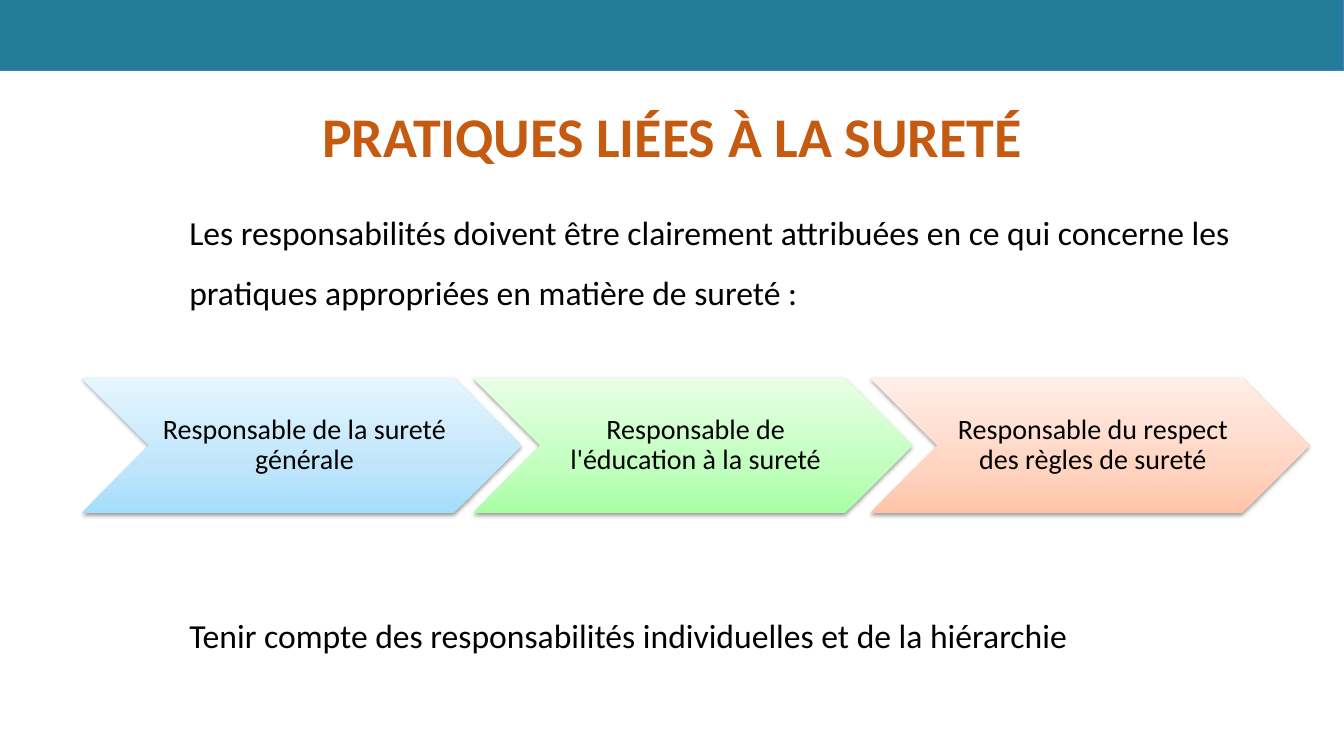
"""Build the slide on who is responsible for safety practices."""
from copy import deepcopy
from dataclasses import dataclass

from lxml import etree
from pptx import Presentation
from pptx.dml.color import RGBColor
from pptx.enum.shapes import MSO_SHAPE
from pptx.enum.text import MSO_ANCHOR, PP_ALIGN
from pptx.oxml.ns import qn
from pptx.shapes.autoshape import Shape
from pptx.slide import Slide
from pptx.util import Inches, Pt

RECTANGLE, CHEVRON = MSO_SHAPE.RECTANGLE, MSO_SHAPE.CHEVRON
TOP, MIDDLE = MSO_ANCHOR.TOP, MSO_ANCHOR.MIDDLE
LEFT, CENTER = PP_ALIGN.LEFT, PP_ALIGN.CENTER

BLACK = RGBColor(0x00, 0x00, 0x00)
TEAL = RGBColor(0x23, 0x7C, 0x9A)
BAND_EDGE = RGBColor(0x4B, 0x7E, 0xBC)
ORANGE = RGBColor(0xC5, 0x5A, 0x11)
BLUES = (RGBColor(0xA4, 0xDD, 0xFB), RGBColor(0xC0, 0xE6, 0xFB), RGBColor(0xE6, 0xF6, 0xFF))
GREENS = (RGBColor(0xA9, 0xFF, 0xA4), RGBColor(0xC2, 0xFF, 0xBF), RGBColor(0xE8, 0xFF, 0xE6))
PEACHES = (RGBColor(0xFF, 0xC4, 0xA9), RGBColor(0xFF, 0xD5, 0xC2), RGBColor(0xFF, 0xEF, 0xE8))

FONT = "Calibri"
STOP_POSITIONS = (0, 0.35, 1)
STEP_TOP, STEP_WIDTH, STEP_HEIGHT = 3.75, 4.36, 1.34


@dataclass(frozen=True)
class Statement:
    text: str
    left: float
    top: float
    width: float
    height: float
    size: int
    color: RGBColor = BLACK
    bold: bool = False
    align: PP_ALIGN = LEFT
    spacing: float = 1.0


@dataclass(frozen=True)
class Responsibility:
    text: str
    left: float
    shades: tuple[RGBColor, ...]


STATEMENTS = (
    Statement("PRATIQUES LIÉES À LA SURETÉ", 0.96, 0.96, 11.41, 0.77, 40,
              ORANGE, True, CENTER),
    Statement("Les responsabilités doivent être clairement attribuées en ce qui concerne les "
              "pratiques appropriées en matière de sureté :",
              1.78, 1.85, 10.77, 1.4, 24, spacing=1.5),
    Statement("Tenir compte des responsabilités individuelles et de la hiérarchie",
              1.78, 5.85, 10.77, 0.75, 24, spacing=1.5),
)
RESPONSIBILITIES = (
    Responsibility("Responsable de la sureté générale", 0.81, BLUES),
    Responsibility("Responsable de l'éducation à la sureté", 4.69, GREENS),
    Responsibility("Responsable du respect des règles de sureté", 8.63, PEACHES),
)


def write(shape: Shape, text: str, size: int, color: RGBColor, bold: bool,
          align: PP_ALIGN, spacing: float, anchor: MSO_ANCHOR) -> None:
    """Set the text of a shape and its formatting."""
    frame = shape.text_frame
    frame.text = text
    frame.word_wrap = True
    frame.vertical_anchor = anchor
    paragraph = frame.paragraphs[0]
    paragraph.alignment = align
    paragraph.line_spacing = spacing
    font = paragraph.runs[0].font
    font.name, font.size, font.bold = FONT, Pt(size), bold
    font.color.rgb = color


def add_band(slide: Slide) -> None:
    """Draw the band across the top."""
    band = slide.shapes.add_shape(RECTANGLE, 0, 0, Inches(13.33), Inches(0.7))
    band.shadow.inherit = False
    band.fill.solid()
    band.fill.fore_color.rgb = TEAL
    band.line.color.rgb = BAND_EDGE
    band.line.width = Pt(0.75)


def add_statement(slide: Slide, item: Statement) -> None:
    """Add one line or paragraph of free text."""
    box = slide.shapes.add_textbox(Inches(item.left), Inches(item.top),
                                   Inches(item.width), Inches(item.height))
    write(box, item.text, item.size, item.color, item.bold, item.align, item.spacing, TOP)


def shade(shape: Shape, colors: tuple[RGBColor, ...]) -> None:
    """Fill a shape with a three-stop gradient rising from its bottom edge."""
    shape.fill.gradient()
    shape.fill.gradient_angle = 90
    stops = shape._element.spPr.find(qn("a:gradFill")).find(qn("a:gsLst"))
    stops.append(deepcopy(stops[0]))
    for stop, position, color in zip(shape.fill.gradient_stops, STOP_POSITIONS, colors):
        stop.position = position
        stop.color.rgb = color


def cast_shadow(shape: Shape) -> None:
    """Give a shape a soft shadow below it."""
    shape.shadow.inherit = False
    effects = shape._element.spPr.find(qn("a:effectLst"))
    shadow = etree.SubElement(effects, qn("a:outerShdw"), blurRad=str(Pt(3.1)),
                              dist=str(Pt(1.6)), dir="5400000", rotWithShape="0")
    color = etree.SubElement(shadow, qn("a:srgbClr"), val=str(BLACK))
    etree.SubElement(color, qn("a:alpha"), val="38000")


def add_responsibility(slide: Slide, item: Responsibility) -> None:
    """Draw one chevron with its label."""
    step = slide.shapes.add_shape(CHEVRON, Inches(item.left), Inches(STEP_TOP),
                                  Inches(STEP_WIDTH), Inches(STEP_HEIGHT))
    shade(step, item.shades)
    step.line.fill.background()
    cast_shadow(step)
    frame = step.text_frame
    frame.margin_left = Inches(0.09)
    frame.margin_top = frame.margin_right = frame.margin_bottom = Inches(0.03)
    write(step, item.text, 20, BLACK, False, CENTER, 0.9, MIDDLE)


def main() -> None:
    """Build and save the presentation."""
    deck = Presentation()
    deck.slide_width, deck.slide_height = Inches(13.33), Inches(7.5)
    slide = deck.slides.add_slide(deck.slide_layouts[6])
    add_band(slide)
    for statement in STATEMENTS:
        add_statement(slide, statement)
    for responsibility in RESPONSIBILITIES:
        add_responsibility(slide, responsibility)
    deck.save("out.pptx")


if __name__ == "__main__":
    main()
